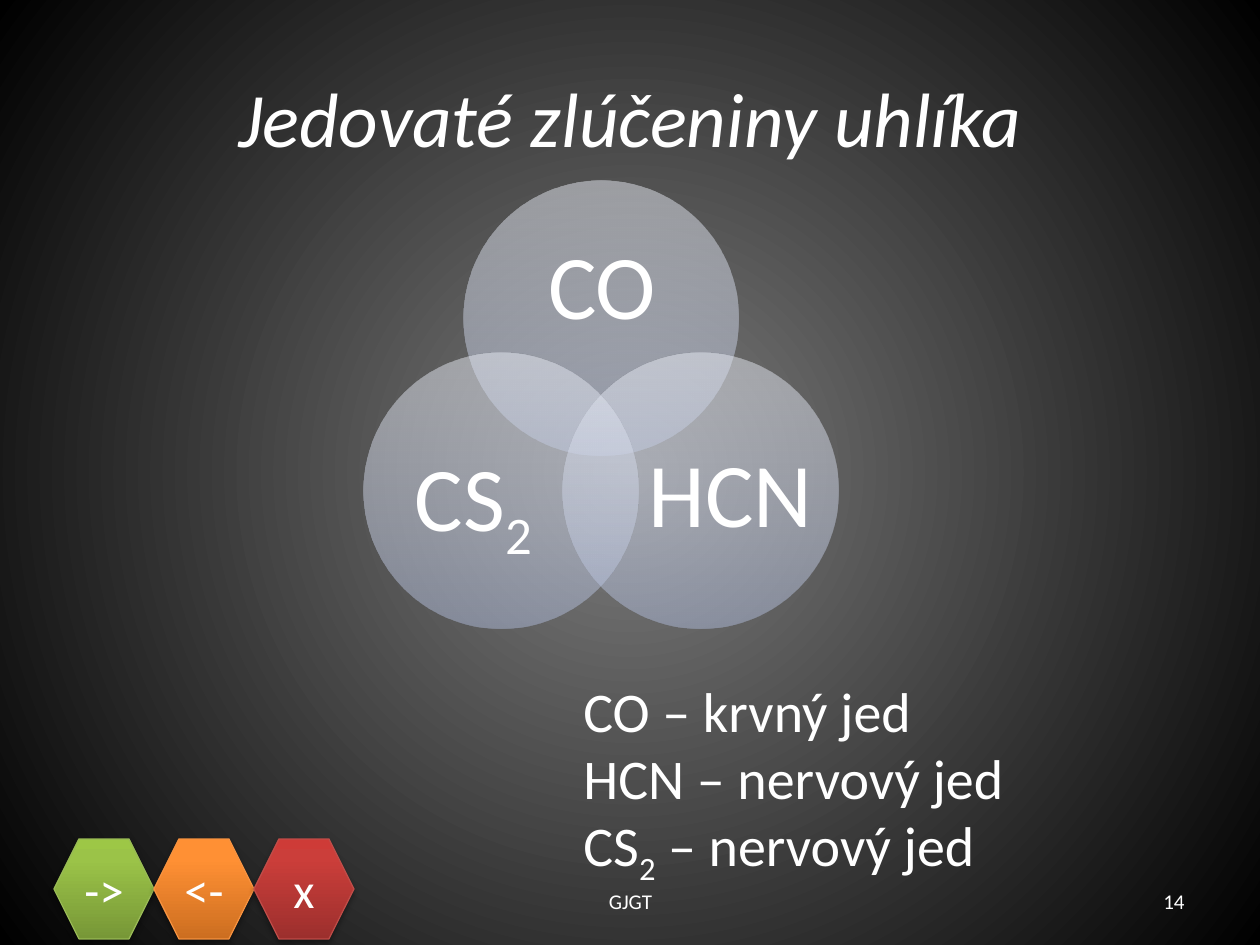
"""Build the slide on poisonous carbon compounds."""
from math import cos, radians, sin

from lxml.etree import SubElement
from pptx import Presentation
from pptx.dml.color import RGBColor
from pptx.enum.shapes import MSO_SHAPE
from pptx.enum.text import MSO_ANCHOR, PP_ALIGN
from pptx.oxml.ns import qn
from pptx.util import Pt

PX = 914400 / 126
WHITE = RGBColor(0xFF, 0xFF, 0xFF)
BLACK = RGBColor(0, 0, 0)
GREY = RGBColor(0x7F, 0x7F, 0x7F)
GREEN = RGBColor(0x98, 0xB9, 0x55)
ORANGE = RGBColor(0xF6, 0x92, 0x40)
RED = RGBColor(0xBF, 0x4C, 0x48)
GREEN_STOPS = [(0, RGBColor(0x77, 0x97, 0x37)), (80, RGBColor(0x9B, 0xC3, 0x48)),
               (100, RGBColor(0x9D, 0xC7, 0x46))]
ORANGE_STOPS = [(0, RGBColor(0xCC, 0x6E, 0x20)), (80, RGBColor(0xFF, 0x90, 0x34)),
                (100, RGBColor(0xFF, 0x91, 0x36))]
RED_STOPS = [(0, RGBColor(0x9C, 0x2F, 0x2D)), (80, RGBColor(0xCB, 0x3E, 0x3A)),
             (100, RGBColor(0xCE, 0x3B, 0x37))]
CIRCLE_STOPS = [(0, RGBColor(0xAF, 0xBB, 0xDA)), (35, RGBColor(0xC7, 0xCF, 0xE4)),
                (100, RGBColor(0xEA, 0xED, 0xF5))]
BACKGROUND_STOPS = [(0, GREY), (100, BLACK)]

TITLE = "Jedovaté zlúčeniny uhlíka"
BUTTONS = [("->", GREEN, GREEN_STOPS), ("<-", ORANGE, ORANGE_STOPS), ("x", RED, RED_STOPS)]
COMPOUNDS = [
    (["CO"], -90, (501, 229, 202, 123)),
    (["HCN"], 30, (648, 423, 165, 151)),
    (["CS", "2"], 150, (391, 423, 165, 151)),
]
EFFECTS = [["CO – krvný jed"], ["HCN – nervový jed"], ["CS", "2", " – nervový jed"]]
FOOTERS = [("14", (903, 876, 294, 50), PP_ALIGN.RIGHT),
           ("GJGT", (431, 876, 399, 50), PP_ALIGN.CENTER)]

BUTTON_LEFT, BUTTON_TOP, BUTTON_SIZE = 54, 839, 100
VENN_X, VENN_Y, VENN_RADIUS, CIRCLE_SIZE = 601, 433, 115, 275


def emu(*lengths):
    return [round(length * PX) for length in lengths]


def add_color(parent, color, alpha):
    clr = SubElement(parent, qn("a:srgbClr"), val=str(color))
    if alpha < 100:
        SubElement(clr, qn("a:alpha"), val=str(alpha * 1000))


def set_gradient(fill, holder, stops, alpha=100, radial=False):
    fill.solid()
    solid = holder.find(qn("a:solidFill"))
    gradient = holder.makeelement(qn("a:gradFill"), {"rotWithShape": "1"})
    stop_list = SubElement(gradient, qn("a:gsLst"))
    for position, color in stops:
        stop = SubElement(stop_list, qn("a:gs"), pos=str(position * 1000))
        add_color(stop, color, alpha)
    if radial:
        circle = SubElement(gradient, qn("a:path"), {"path": "circle"})
        SubElement(circle, qn("a:fillToRect"), dict.fromkeys("ltrb", "50000"))
    else:
        SubElement(gradient, qn("a:lin"), ang="16200000", scaled="0")
    holder.replace(solid, gradient)


def add_shadow(shape):
    effects = shape._element.spPr.find(qn("a:effectLst"))
    shadow = SubElement(effects, qn("a:outerShdw"), blurRad=str(Pt(3.1)), dist=str(Pt(1.8)),
                        dir="5400000", rotWithShape="0")
    add_color(shadow, BLACK, 35)


def write(frame, lines, size, align, anchor=MSO_ANCHOR.MIDDLE, wrap=True):
    frame.word_wrap = wrap
    frame.vertical_anchor = anchor
    for index, parts in enumerate(lines):
        paragraph = frame.add_paragraph() if index else frame.paragraphs[0]
        paragraph.alignment = align
        paragraph.font.size = Pt(size)
        paragraph.font.name = "Calibri"
        paragraph.font.color.rgb = WHITE
        for part in parts:
            run = paragraph.add_run()
            run.text = part
            if part == "2":
                run.font._element.set("baseline", "-25000")


def add_button(slide, index, label, outline, stops):
    left = BUTTON_LEFT + index * BUTTON_SIZE
    button = slide.shapes.add_shape(
        MSO_SHAPE.HEXAGON, *emu(left, BUTTON_TOP, BUTTON_SIZE, BUTTON_SIZE))
    set_gradient(button.fill, button._element.spPr, stops)
    button.line.color.rgb = outline
    button.line.width = Pt(0.75)
    button.shadow.inherit = False
    add_shadow(button)
    write(button.text_frame, [[label]], 28, PP_ALIGN.CENTER, wrap=False)


def add_compound(group, formula, angle, label_box):
    left = VENN_X + VENN_RADIUS * cos(radians(angle)) - CIRCLE_SIZE / 2
    top = VENN_Y + VENN_RADIUS * sin(radians(angle)) - CIRCLE_SIZE / 2
    circle = group.shapes.add_shape(MSO_SHAPE.OVAL, *emu(left, top, CIRCLE_SIZE, CIRCLE_SIZE))
    set_gradient(circle.fill, circle._element.spPr, CIRCLE_STOPS, alpha=50)
    circle.line.fill.background()
    circle.shadow.inherit = False
    frame = group.shapes.add_textbox(*emu(*label_box)).text_frame
    frame.margin_left = frame.margin_right = frame.margin_top = frame.margin_bottom = 0
    write(frame, [formula], 52, PP_ALIGN.CENTER)
    frame.paragraphs[0].line_spacing = 0.9
    frame.paragraphs[0].space_after = Pt(18)


def main():
    prs = Presentation()
    prs.slide_width, prs.slide_height = emu(1260, 945)
    slide = prs.slides.add_slide(prs.slide_layouts[5])
    background = slide.background.fill
    background.solid()
    holder = next(slide.element.iter(qn("p:bgPr")))
    set_gradient(background, holder, BACKGROUND_STOPS, radial=True)

    title = slide.shapes.title
    title.left, title.top, title.width, title.height = emu(63, 38, 1134, 158)
    write(title.text_frame, [[TITLE]], 44, PP_ALIGN.CENTER)
    title.text_frame.paragraphs[0].font.italic = True

    for index, button in enumerate(BUTTONS):
        add_button(slide, index, *button)
    venn = slide.shapes.add_group_shape()
    for compound in COMPOUNDS:
        add_compound(venn, *compound)

    effects = slide.shapes.add_textbox(*emu(571, 670, 476, 217))
    write(effects.text_frame, EFFECTS, 32, PP_ALIGN.LEFT, MSO_ANCHOR.TOP)
    for text, box, align in FOOTERS:
        write(slide.shapes.add_textbox(*emu(*box)).text_frame, [[text]], 12, align)
    prs.save("out.pptx")


if __name__ == "__main__":
    main()
